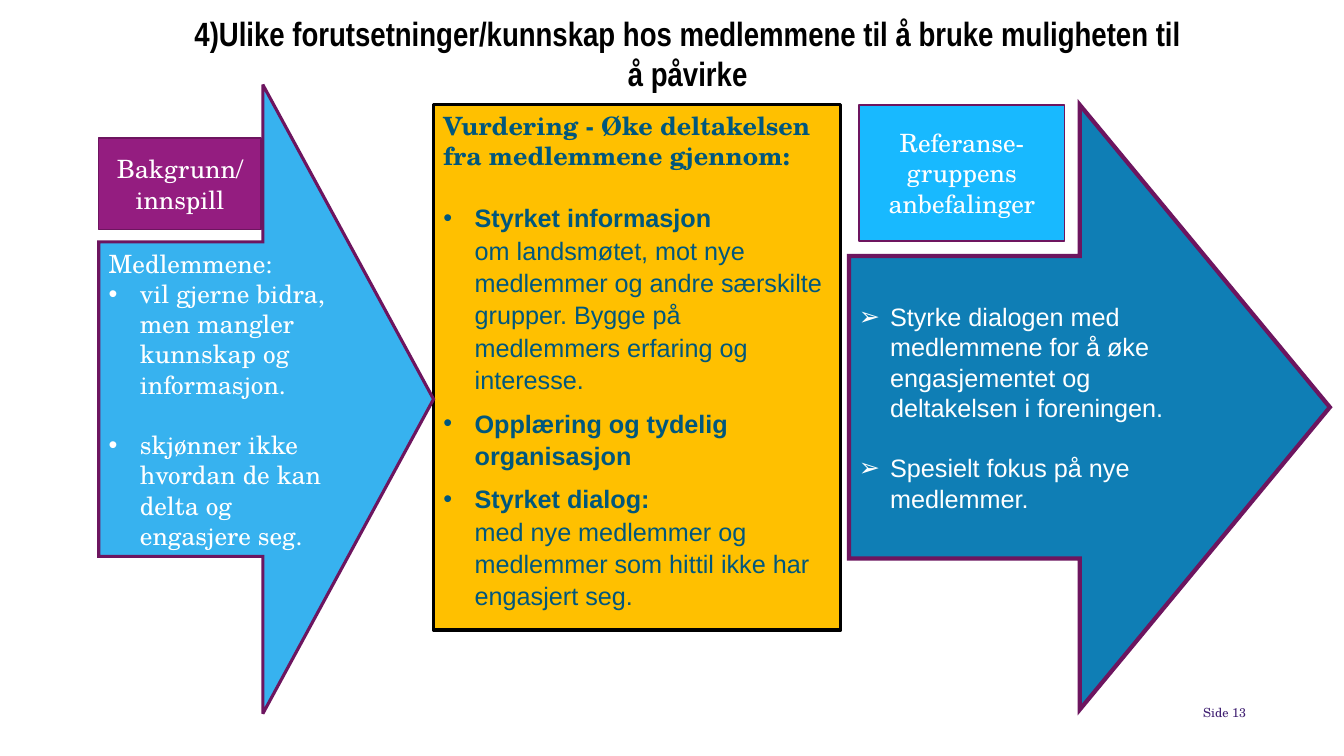
from lxml.etree import SubElement
from pptx import Presentation
from pptx.dml.color import RGBColor
from pptx.enum.shapes import MSO_SHAPE
from pptx.enum.text import MSO_ANCHOR, MSO_AUTO_SIZE, PP_ALIGN
from pptx.oxml.ns import qn
from pptx.util import Pt

# Content: each paragraph is (bold text, plain text, bullet, space before, space after)
TITLE = "4)Ulike forutsetninger/kunnskap hos medlemmene til å bruke muligheten til å påvirke"
ASSESSMENT_HEADING = [("Vurdering - Øke deltakelsen fra medlemmene gjennom:", "", "", 0, 21.6)]
ASSESSMENT = [
    ("Styrket informasjon", "om landsmøtet, mot nye medlemmer og andre særskilte grupper. "
     "Bygge på medlemmers erfaring og interesse.", "•", 0, 8),
    ("Opplæring og tydelig organisasjon", "", "•", 0, 8),
    ("Styrket dialog:", "med nye medlemmer og medlemmer som hittil ikke har engasjert seg.", "•", 0, 8),
]
RECOMMENDATIONS = [
    ("", "Styrke dialogen med medlemmene for å øke engasjementet og deltakelsen i foreningen.", "➢", 0, 0),
    ("", "Spesielt fokus på nye medlemmer.", "➢", 21.6, 0),
]
BACKGROUND = [
    ("", "Medlemmene:", "", 0, 0),
    ("", "vil gjerne bidra, men mangler kunnskap og informasjon.", "•", 0, 0),
    ("", "skjønner ikke hvordan de kan delta og engasjere seg.", "•", 21.6, 0),
]
BACKGROUND_LABEL = [("", "Bakgrunn/", "", 0, 0), ("", "innspill", "", 0, 0)]
RECOMMENDATIONS_LABEL = [("", "Referanse-gruppens anbefalinger", "", 0, 0)]
PAGE = "Side 13"

COLOURS = {
    "black": "000000", "white": "FFFFFF", "yellow": "FFC000", "petrol": "00577D",
    "blue": "0F7EB5", "sky": "37B2EF", "cyan": "18B9FF",
    "plum": "6D155F", "purple": "941D80", "violet": "3F1F71",
}
SERIF, SANS, NARROW = "TeX Gyre Schola", "Arial", "Arial Narrow"
PX = 9144  # 100 px to the inch
INDENT = 31


def colour(name):
    return RGBColor.from_string(COLOURS[name])


def px(*lengths):
    return [length * PX for length in lengths]


def set_bullet(paragraph, bullet):
    properties = paragraph._p.get_or_add_pPr()
    properties.set("marL", str(INDENT * PX))
    properties.set("indent", str(-INDENT * PX))
    SubElement(properties, qn("a:buFont")).set("typeface", SANS)
    SubElement(properties, qn("a:buChar")).set("char", bullet)


def write(frame, paragraphs, font=SERIF, size=18, ink="white", align=PP_ALIGN.LEFT,
          anchor=MSO_ANCHOR.MIDDLE, spacing=None, more=False):
    """Fill the frame, or add to its text when more is set."""
    frame.word_wrap = True
    frame.auto_size = MSO_AUTO_SIZE.NONE
    frame.vertical_anchor = anchor
    for number, (strong, plain, bullet, before, after) in enumerate(paragraphs):
        paragraph = frame.add_paragraph() if number or more else frame.paragraphs[0]
        paragraph.alignment = align
        paragraph.space_before, paragraph.space_after = Pt(before), Pt(after)
        if spacing:
            paragraph.line_spacing = Pt(spacing)
        if bullet:
            set_bullet(paragraph, bullet)
        for text, bold in ((strong, True), (plain, False)):
            if not text:
                continue
            if strong and not bold:
                paragraph.add_line_break()
            run = paragraph.add_run()
            run.text = text
            run.font.name, run.font.size, run.font.bold = font, Pt(size), bold
            run.font.color.rgb = colour(ink)


def add_block(kind, box, fill, edge, width):
    block = slide.shapes.add_shape(kind, *px(*box))
    block.shadow.inherit = False
    block.fill.solid()
    block.fill.fore_color.rgb = colour(fill)
    block.line.color.rgb = colour(edge)
    block.line.width = Pt(width)
    return block


def add_arrow(box, head, fill, width):
    arrow = add_block(MSO_SHAPE.RIGHT_ARROW, box, fill, "plum", width)
    arrow.adjustments[0], arrow.adjustments[1] = 0.5, head
    SubElement(arrow.line._get_or_add_ln(), qn("a:miter")).set("lim", "800000")
    return arrow.text_frame


prs = Presentation()
prs.slide_width, prs.slide_height = px(1333, 750)
slide = prs.slides.add_slide(prs.slide_layouts[5])

# Title
title = slide.shapes.title
title.left, title.top, title.width, title.height = px(179, 7, 1006, 91)
write(title.text_frame, [(TITLE, "", "", 0, 0)], font=NARROW, size=24, ink="black",
      align=PP_ALIGN.CENTER)

# Assessment in the middle
assessment = add_block(MSO_SHAPE.RECTANGLE, (430, 104, 404, 521), "yellow", "black", 2.25).text_frame
write(assessment, ASSESSMENT_HEADING, ink="petrol", anchor=MSO_ANCHOR.TOP)
write(assessment, ASSESSMENT, font=SANS, ink="petrol", anchor=MSO_ANCHOR.TOP, spacing=23.1, more=True)

# Arrows: recommendations on the right, background on the left
write(add_arrow((842, 104, 477, 600), 0.52, "blue", 3), RECOMMENDATIONS, font=SANS, spacing=21.6)
write(add_arrow((98, 84, 332, 624), 0.51, "sky", 2.25), BACKGROUND)

# Labels above the arrows
for box, fill, label in (
    ((98, 137, 161, 91), "purple", BACKGROUND_LABEL),
    ((852, 104, 204, 135), "cyan", RECOMMENDATIONS_LABEL),
):
    write(add_block(MSO_SHAPE.RECTANGLE, box, fill, "plum", 1).text_frame, label,
          align=PP_ALIGN.CENTER)

# Page number
page = slide.shapes.add_textbox(*px(936, 699, 300, 15)).text_frame
page.margin_left = page.margin_right = page.margin_top = page.margin_bottom = 0
write(page, [("", PAGE, "", 0, 0)], size=9, ink="violet", align=PP_ALIGN.RIGHT)

prs.save("out.pptx")
